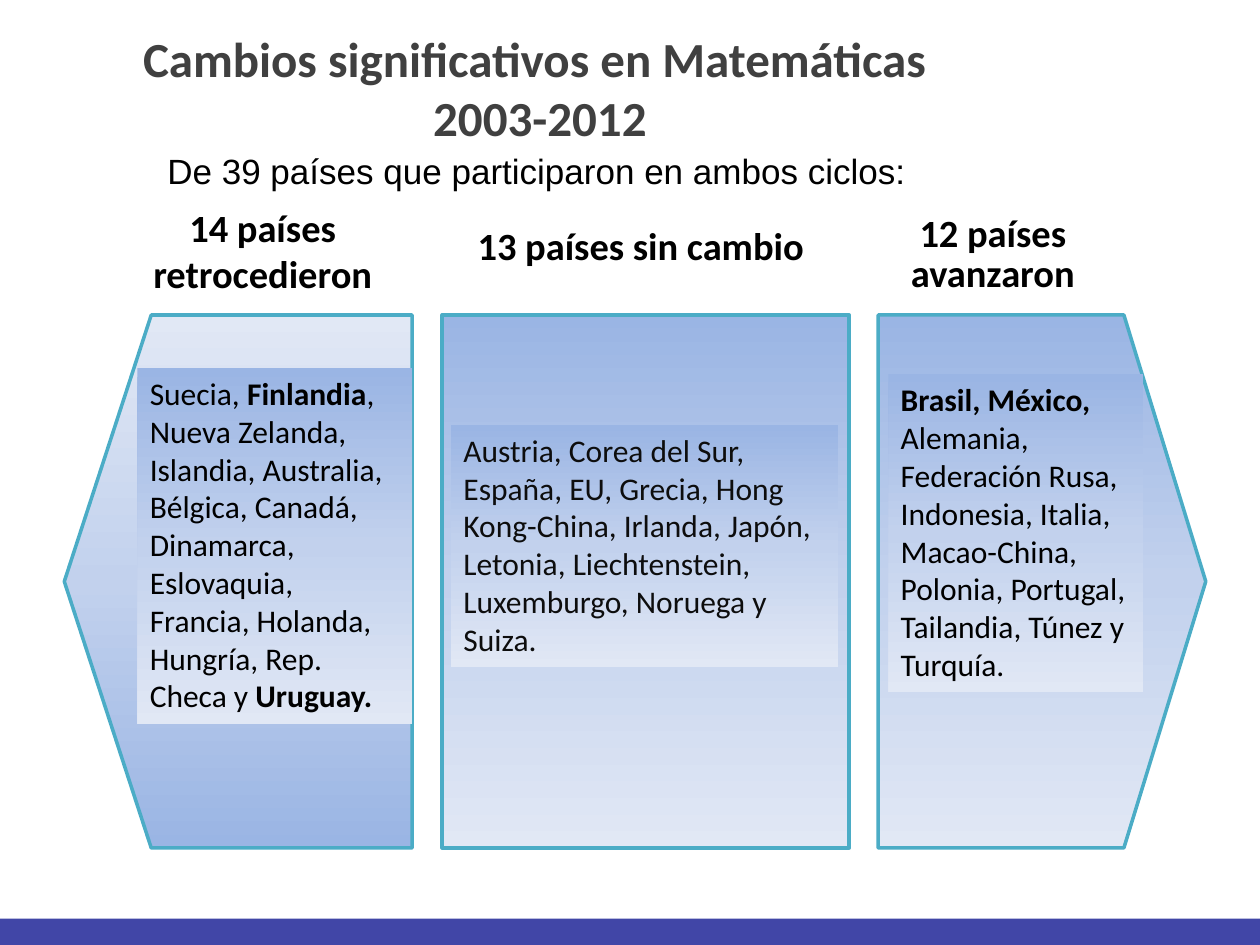
from lxml.etree import SubElement
from pptx import Presentation
from pptx.dml.color import RGBColor
from pptx.enum.shapes import MSO_SHAPE as Shape
from pptx.enum.text import MSO_ANCHOR as Anchor, PP_ALIGN as Align
from pptx.oxml.ns import qn
from pptx.util import Inches, Pt

COLS, ROWS = 100, 75
STOPS = ((0, "9AB5E4"), (50, "C2D1ED"), (100, "E1E8F5"))


def rgb(color):
    return RGBColor.from_string(color)


def write(tf, text, size=18, font="Calibri", color="000000", bold=False,
          align=Align.LEFT, spacing=None):
    tf.word_wrap = True
    tf.vertical_anchor = Anchor.TOP
    for i, line in enumerate(text.split("\n")):
        p = tf.paragraphs[0] if i == 0 else tf.add_paragraph()
        p.alignment = align
        p.line_spacing = spacing
        for j, part in enumerate(line.split("**")):
            if part:
                r = p.add_run()
                r.text = part
                r.font.name = font
                r.font.size = Pt(size)
                r.font.color.rgb = rgb(color)
                r.font.bold = bold or j % 2 == 1


class Canvas:
    line_color = "4BACC6"
    line_width = 2

    def __init__(self, prs):
        self.cell_w = prs.slide_width / COLS
        self.cell_h = prs.slide_height / ROWS
        self.s = prs.slides.add_slide(prs.slide_layouts[6])

    def place(self, x, y, w, h):
        return (round(x * self.cell_w), round(y * self.cell_h),
                round(w * self.cell_w), round(h * self.cell_h))

    def shape(self, kind, box):
        sp = self.s.shapes.add_shape(kind, *self.place(*box))
        sp.shadow.inherit = False
        sp.line.fill.background()
        return sp

    def band(self, box, color):
        sp = self.shape(Shape.RECTANGLE, box)
        sp.fill.solid()
        sp.fill.fore_color.rgb = rgb(color)

    def gradient(self, kind, box):
        sp = self.shape(kind, box)
        sp.fill.gradient()
        sp.fill.gradient_angle = 270
        stops = sp._element.spPr.find(qn("a:gradFill")).find(qn("a:gsLst"))
        for stop in list(stops):
            stops.remove(stop)
        for pos, color in STOPS:
            stop = SubElement(stops, qn("a:gs"), pos=str(pos * 1000))
            SubElement(stop, qn("a:srgbClr"), val=color)
        return sp

    def panel(self, kind, box, rotation=0):
        sp = self.gradient(kind, box)
        sp.line.color.rgb = rgb(self.line_color)
        sp.line.width = Pt(self.line_width)
        sp.rotation = rotation
        if kind == Shape.PENTAGON:
            sp.adjustments[0] = 0.25

    def card(self, box, text, **style):
        write(self.gradient(Shape.RECTANGLE, box).text_frame, text, **style)

    def text(self, box, text, **style):
        sp = self.s.shapes.add_textbox(*self.place(*box))
        write(sp.text_frame, text, **style)

    def heading(self, box, text, size=22, **style):
        self.text(box, text, size=size, bold=True, align=Align.CENTER, **style)


def main():
    prs = Presentation()
    prs.slide_width, prs.slide_height = Inches(10), Inches(7.5)
    c = Canvas(prs)
    c.band((0, 72.9, COLS, 2.1), "4146A7")

    top, height = 25, 42.3
    c.panel(Shape.PENTAGON, (5.1, top, 27.6, height), rotation=180)
    c.panel(Shape.PENTAGON, (69.7, top, 26, height))
    c.panel(Shape.RECTANGLE, (35.1, top, 32.3, height))

    c.card((70.5, 29.7, 20.2, 25.2),
           "**Brasil, México, **Alemania, Federación Rusa, Indonesia, Italia, "
           "Macao-China, Polonia, Portugal, Tailandia, Túnez y Turquía.")
    c.card((35.8, 33.7, 30.7, 19.2),
           "Austria, Corea del Sur, España, EU, Grecia, Hong Kong-China, "
           "Irlanda, Japón, Letonia, Liechtenstein, Luxemburgo, Noruega y "
           "Suiza.", color="0D0D0D")
    c.card((10.9, 29.2, 21.8, 28.3),
           "Suecia, **Finlandia**, Nueva Zelanda, Islandia, Australia, "
           "Bélgica, Canadá, Dinamarca, Eslovaquia, Francia, Holanda, "
           "Hungría, Rep. Checa y **Uruguay.**")

    c.heading((69, 16.7, 19.6, 7.3), "12 países\navanzaron", spacing=0.85)
    c.heading((34.4, 17.7, 32.9, 4.2), "13 países sin cambio", spacing=0.85)
    c.heading((9.8, 15.7, 22.1, 8.3), "14 países\nretrocedieron")
    c.heading((5.1, 1.8, 75.5, 9.4),
              "Cambios significativos en Matemáticas \n2003-2012",
              size=28, color="404040")
    c.text((12.3, 11.4, 70.3, 4.4),
           "De 39 países que participaron en ambos ciclos:",
           size=20, font="Arial")
    prs.save("out.pptx")


if __name__ == "__main__":
    main()
